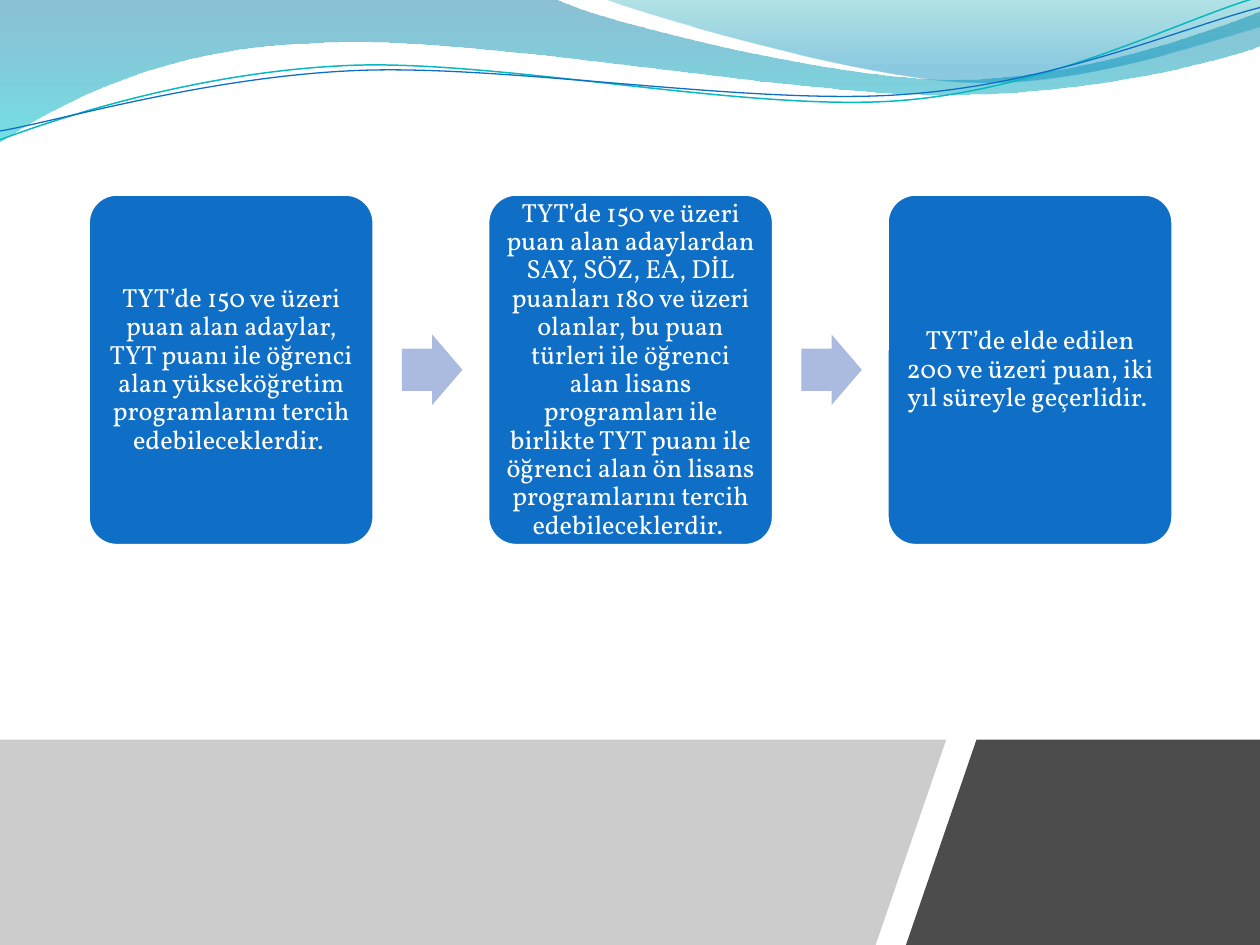
from lxml.etree import SubElement
from pptx import Presentation
from pptx.dml.color import RGBColor
from pptx.enum.shapes import MSO_SHAPE
from pptx.enum.text import MSO_ANCHOR, PP_ALIGN
from pptx.oxml.ns import qn
from pptx.util import Inches, Pt

WHITE = RGBColor(0xFF, 0xFF, 0xFF)
BLACK = RGBColor(0x00, 0x00, 0x00)
GRAY = RGBColor(0x80, 0x80, 0x80)
BLUE = RGBColor(0x0F, 0x6F, 0xC6)
ARROW_BLUE = RGBColor(0xAB, 0xBB, 0xDF)
TEAL = RGBColor(0x0A, 0xB8, 0xBF)
DEEP_BLUE = RGBColor(0x00, 0x74, 0xA1)
CYAN = RGBColor(0x00, 0xC6, 0xCF)
SEA_GREEN = RGBColor(0x00, 0xA1, 0xA9)
SKY_BLUE = RGBColor(0x00, 0x8B, 0xBF)

FONT = "Vollkorn"

STEPS = [
    "TYT’de 150 ve üzeri puan alan adaylar, TYT puanı ile öğrenci alan "
    "yükseköğretim programlarını tercih edebileceklerdir. ",
    "TYT’de 150 ve üzeri puan alan adaylardan SAY, SÖZ, EA, DİL puanları 180 ve "
    "üzeri olanlar, bu puan türleri ile öğrenci alan lisans programları ile "
    "birlikte TYT puanı ile öğrenci alan ön lisans programlarını tercih "
    "edebileceklerdir. ",
    "TYT’de elde edilen 200 ve üzeri puan, iki yıl süreyle geçerlidir. ",
]

# Each segment is one point (straight) or two controls and an end point (curve).
BROAD_WAVE = [
    [(0, 0)], [(4.4, -0.01)],
    [(4.76, 0.17), (6.64, 0.63), (7.58, 0.63)],
    [(8.53, 0.63), (9.58, 0.26), (10, 0.09)], [(10.01, 0.36)],
    [(9.83, 0.44), (8.7, 0.76), (7.46, 0.75)],
    [(6.22, 0.75), (3.82, 0.28), (2.57, 0.34)],
    [(1.29, 0.36), (0.46, 0.83), (-0.01, 1.13)],
]
RIGHT_WAVE = [
    [(4.79, -0.01)],
    [(5.09, 0.11), (6.82, 0.62), (7.69, 0.65)],
    [(8.56, 0.69), (9.61, 0.32), (10, 0.21)], [(10, 0)],
]
TEAL_LINE = [
    [(0, 1.11)],
    [(0.48, 0.93), (1.58, 0.57), (2.77, 0.52)],
    [(3.95, 0.47), (5.93, 0.89), (7.13, 0.8)],
    [(8.33, 0.71), (9.38, 0.15), (9.98, -0.02)],
]
BLUE_LINE = [
    [(0, 1.04)],
    [(0.47, 0.96), (1.64, 0.61), (2.83, 0.56)],
    [(4.03, 0.51), (5.97, 0.84), (7.17, 0.75)],
    [(8.36, 0.67), (9.41, 0.21), (10, 0.06)],
]


def add_outline(slide, segments, close=True):
    """Draw the segments as a freeform, bending those that have controls."""
    (x, y), *ends = [(Inches(px), Inches(py)) for px, py in (s[-1] for s in segments)]
    builder = slide.shapes.build_freeform(x, y)
    builder.add_line_segments(ends, close=close)
    outline = builder.convert_to_shape()
    outline.shadow.inherit = False
    straights = list(outline.element.spPr.iter(qn("a:lnTo")))
    for straight, segment in zip(straights, segments[1:]):
        if len(segment) == 1:
            continue
        straight.tag = qn("a:cubicBezTo")
        end = straight[0]
        for control_x, control_y in segment[:-1]:
            control = SubElement(straight, qn("a:pt"))
            control.set("x", str(Inches(control_x) - outline.left))
            control.set("y", str(Inches(control_y) - outline.top))
        straight.append(end)
    return outline


def set_alpha(color_parent, percent):
    color = color_parent.find(qn("a:srgbClr"))
    SubElement(color, qn("a:alpha")).set("val", str(percent * 1000))


def add_wave(slide, segments, stops):
    wave = add_outline(slide, segments)
    wave.line.fill.background()
    wave.fill.gradient()
    wave.fill.gradient_angle = 270
    gradient = wave.fill.gradient_stops
    elements = wave.element.spPr.iter(qn("a:gs"))
    for stop, element, (position, color, alpha) in zip(gradient, elements, stops):
        stop.position = position
        stop.color.rgb = color
        set_alpha(element, alpha)


def add_wave_line(slide, segments, color, width):
    curve = add_outline(slide, segments, close=False)
    curve.fill.background()
    curve.line.color.rgb = color
    curve.line.width = Pt(width)


def add_band(slide, corners, color, alpha):
    band = add_outline(slide, [[corner] for corner in corners])
    band.line.fill.background()
    band.fill.solid()
    band.fill.fore_color.rgb = color
    set_alpha(band.element.spPr.find(qn("a:solidFill")), alpha)


def add_header(slide):
    add_wave(slide, BROAD_WAVE, [(0, DEEP_BLUE, 45), (1, CYAN, 55)])
    add_wave(slide, RIGHT_WAVE, [(0, SEA_GREEN, 30), (0.8, SKY_BLUE, 45)])
    add_wave_line(slide, TEAL_LINE, TEAL, 0.85)
    add_wave_line(slide, BLUE_LINE, BLUE, 0.75)


def add_footer(slide, top, bottom):
    add_band(slide, [(0, top), (7.51, top), (6.95, bottom), (0, bottom)], GRAY, 40)
    add_band(slide, [(7.75, top), (10, top), (10, bottom), (7.19, bottom)], BLACK, 70)


def add_block(slide, kind, left, top, width, height, adjustments, color):
    block = slide.shapes.add_shape(
        kind, Inches(left), Inches(top), Inches(width), Inches(height))
    block.shadow.inherit = False
    for index, value in enumerate(adjustments):
        block.adjustments[index] = value
    block.fill.solid()
    block.fill.fore_color.rgb = color
    block.line.fill.background()
    return block


def add_step(slide, text, left, top, width, height):
    step = add_block(slide, MSO_SHAPE.ROUNDED_RECTANGLE, left, top, width, height,
                     [0.1], BLUE)
    step.line.color.rgb = WHITE
    step.line.width = Pt(2)
    frame = step.text_frame
    frame.word_wrap = True
    frame.vertical_anchor = MSO_ANCHOR.MIDDLE
    for side in ("left", "top", "right", "bottom"):
        setattr(frame, f"margin_{side}", Inches(0.07))
    paragraph = frame.paragraphs[0]
    paragraph.alignment = PP_ALIGN.CENTER
    paragraph.line_spacing = 0.9
    run = paragraph.add_run()
    run.text = text
    run.font.name = FONT
    run.font.size = Pt(15)
    run.font.color.rgb = WHITE


def add_process(slide, left, top, width, height):
    """Place the steps in equal columns with an arrow in each gap."""
    step_width, arrow_width, arrow_height = 2.27, 0.48, 0.56
    pitch = (width - step_width) / (len(STEPS) - 1)
    arrow_top = top + (height - arrow_height) / 2
    for index, text in enumerate(STEPS):
        step_left = left + index * pitch
        if index:
            add_block(slide, MSO_SHAPE.RIGHT_ARROW, step_left - 0.68, arrow_top,
                      arrow_width, arrow_height, [0.6, 0.5], ARROW_BLUE)
        add_step(slide, text, step_left, top, step_width, height)


def main():
    presentation = Presentation()
    presentation.slide_width = Inches(10)
    presentation.slide_height = Inches(7.5)
    slide = presentation.slides.add_slide(presentation.slide_layouts[6])
    add_header(slide)
    add_footer(slide, 5.87, 7.5)
    add_process(slide, 0.7, 1.54, 8.61, 2.79)
    presentation.save("out.pptx")


if __name__ == "__main__":
    main()
